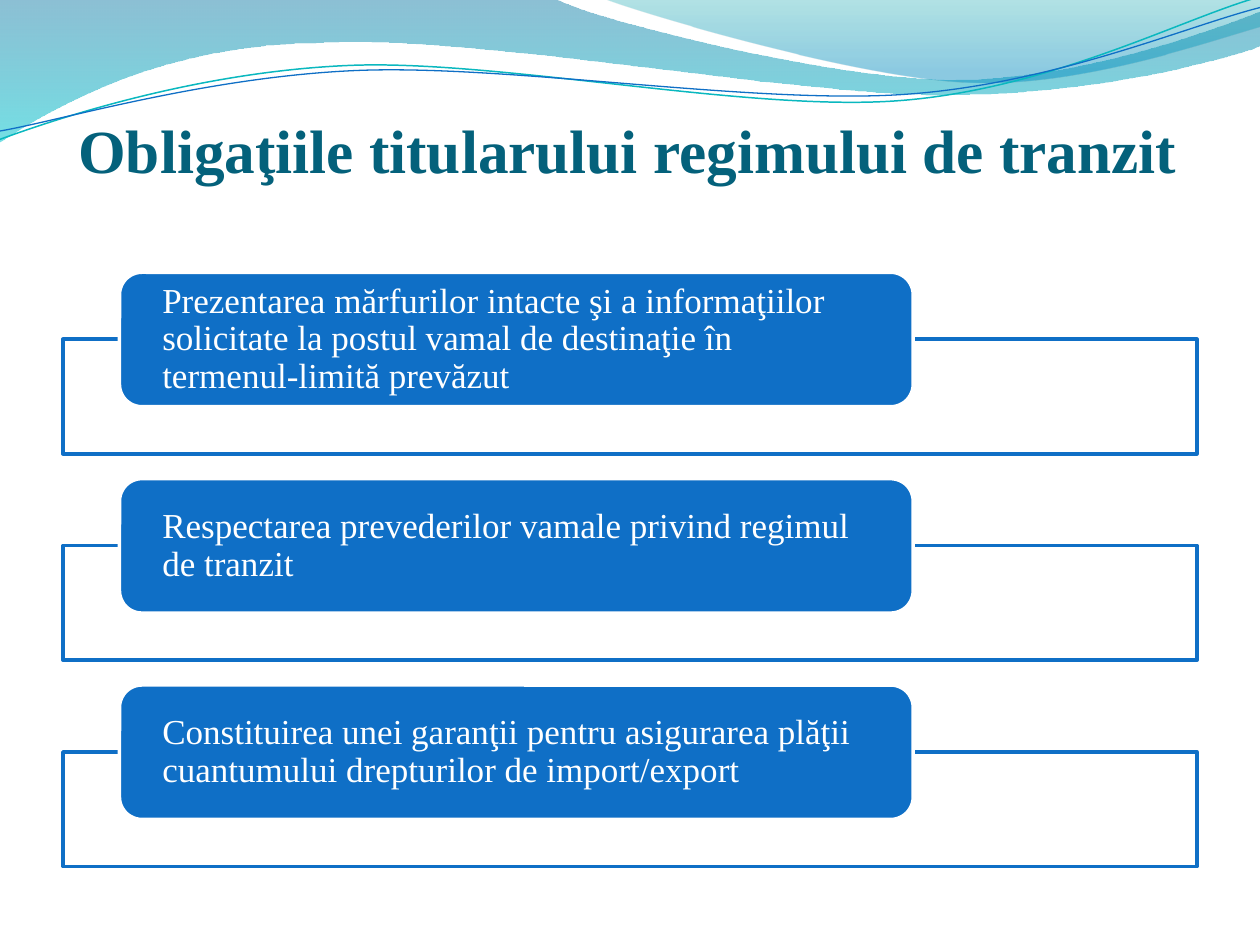
from dataclasses import dataclass

from lxml.etree import SubElement
from pptx import Presentation
from pptx.dml.color import RGBColor
from pptx.enum.shapes import MSO_SHAPE as Preset
from pptx.enum.text import MSO_ANCHOR as Anchor, MSO_AUTO_SIZE as AutoSize, PP_ALIGN as Align
from pptx.oxml.ns import qn
from pptx.util import Cm, Pt


@dataclass(frozen=True)
class Theme:
    font: str = "Times New Roman"
    title_size: int = 35
    body_size: int = 20
    title: str = "04617B"
    accent: str = "0F6FC6"
    teal: str = "0AB8BF"
    white: str = "FFFFFF"
    # Gradient stops: position, colour, opacity in percent
    band: tuple = ((0, "0074A1", 45), (1, "00C6CF", 55))
    corner: tuple = ((0, "00A1A9", 30), (0.8, "008BBF", 45))


THEME = Theme()
CM_PER_INCH = 2.54

# Outlines in inches: a start point, then steps of one point (line) or three (curve)
BAND = [
    (0, -0.01), [(4.4, -0.01)],
    [(4.76, 0.17), (6.64, 0.63), (7.58, 0.63)],
    [(8.53, 0.63), (9.58, 0.26), (10, 0.09)],
    [(10.01, 0.36)],
    [(9.83, 0.44), (8.7, 0.76), (7.46, 0.75)],
    [(6.22, 0.75), (3.82, 0.28), (2.57, 0.34)],
    [(1.29, 0.35), (0.46, 0.83), (-0.01, 1.13)],
]
CORNER = [
    (4.79, -0.01),
    [(5.09, 0.11), (6.82, 0.62), (7.69, 0.65)],
    [(8.56, 0.69), (9.61, 0.32), (10, 0.21)],
    [(10, 0)],
]
TEAL_WAVE = [
    (-0.01, 1.11),
    [(0.48, 0.93), (1.58, 0.57), (2.77, 0.52)],
    [(3.95, 0.47), (5.93, 0.89), (7.13, 0.8)],
    [(8.33, 0.71), (9.38, 0.15), (9.98, -0.02)],
]
BLUE_WAVE = [
    (0, 1.04),
    [(0.47, 0.96), (1.64, 0.61), (2.83, 0.56)],
    [(4.03, 0.51), (5.97, 0.83), (7.17, 0.75)],
    [(8.36, 0.67), (9.41, 0.21), (10, 0.06)],
]

TITLE = "Obligaţiile titularului regimului de tranzit"
OBLIGATIONS = [
    "Prezentarea mărfurilor intacte şi a informaţiilor solicitate la postul vamal "
    "de destinaţie în termenul-limită prevăzut",
    "Respectarea prevederilor vamale privind regimul de tranzit",
    "Constituirea unei garanţii pentru asigurarea plăţii cuantumului drepturilor "
    "de import/export",
]


def rgb(colour):
    return RGBColor.from_string(colour)


def set_opacity(shape, opacities):
    """Give the fill colours of a shape, in order, an opacity in percent."""
    colours = shape.element.spPr.iter(qn("a:srgbClr"))
    for colour, opacity in zip(list(colours), opacities):
        SubElement(colour, qn("a:alpha"), val=str(opacity * 1000))


def set_line(shape, colour, width):
    shape.line.color.rgb = rgb(colour)
    shape.line.width = Pt(width)


def write_text(shape, text, *, size, colour, bold=False, anchor=Anchor.MIDDLE,
               margins=(0, 0, 0, 0), line_spacing=1.0):
    frame = shape.text_frame
    frame.word_wrap = True
    frame.auto_size = AutoSize.NONE
    frame.vertical_anchor = anchor
    (frame.margin_left, frame.margin_top,
     frame.margin_right, frame.margin_bottom) = map(Cm, margins)
    frame.text = text
    paragraph = frame.paragraphs[0]
    paragraph.alignment = Align.LEFT
    paragraph.line_spacing = line_spacing
    font = paragraph.runs[0].font
    font.name, font.size, font.bold = THEME.font, Pt(size), bold
    font.color.rgb = rgb(colour)


def add_curve(slide, outline, closed):
    """Draw a freeform, turning each three-point step into a Bézier curve."""
    def to_slide(point):
        return tuple(Cm(value * CM_PER_INCH) for value in point)

    start, *steps = outline
    builder = slide.shapes.build_freeform(*to_slide(start))
    builder.add_line_segments(
        [to_slide(point) for step in steps for point in step], close=closed)
    shape = builder.convert_to_shape()
    shape.shadow.inherit = False
    segments = iter(list(shape.element.iter(qn("a:lnTo"))))
    for step in steps:
        first, *others = [next(segments) for _ in step]
        if others:
            first.tag = qn("a:cubicBezTo")
            for segment in others:
                first.append(segment[0])
                segment.getparent().remove(segment)
    return shape


def add_gradient_area(slide, outline, stops):
    shape = add_curve(slide, outline, closed=True)
    shape.line.fill.background()
    shape.fill.gradient()
    shape.fill.gradient_angle = 270
    for stop, (position, colour, _) in zip(shape.fill.gradient_stops, stops):
        stop.position = position
        stop.color.rgb = rgb(colour)
    set_opacity(shape, [opacity for _, _, opacity in stops])


def add_wave(slide, outline, colour, width):
    shape = add_curve(slide, outline, closed=False)
    shape.fill.background()
    set_line(shape, colour, width)


def add_box(slide, preset, left, top, width, height, *, fill, line):
    shape = slide.shapes.add_shape(preset, Cm(left), Cm(top), Cm(width), Cm(height))
    shape.shadow.inherit = False
    shape.fill.solid()
    shape.fill.fore_color.rgb = rgb(fill)
    set_line(shape, line, 2)
    return shape


def add_obligation(slide, text, top):
    frame = add_box(slide, Preset.RECTANGLE, 1.27, top + 1.35, 22.86, 2.31,
                    fill=THEME.white, line=THEME.accent)
    set_opacity(frame, [90])
    card = add_box(slide, Preset.ROUNDED_RECTANGLE, 2.41, top, 16, 2.71,
                   fill=THEME.accent, line=THEME.white)
    write_text(card, text, size=THEME.body_size, colour=THEME.white,
               margins=(0.73, 0, 0.73, 0), line_spacing=0.9)


def place_title(slide):
    title = slide.shapes.title
    title.left, title.top, title.width, title.height = map(Cm, (1.27, 1.96, 22.86, 1.78))
    write_text(title, TITLE, size=THEME.title_size, colour=THEME.title, bold=True,
               anchor=Anchor.BOTTOM, margins=(0.31, 0.13, 0, 0))
    # Bring the title in front of the waves
    title.element.getparent().append(title.element)


def main():
    presentation = Presentation()
    presentation.slide_width, presentation.slide_height = Cm(25.4), Cm(19.05)
    slide = presentation.slides.add_slide(presentation.slide_layouts[5])
    add_gradient_area(slide, BAND, THEME.band)
    add_gradient_area(slide, CORNER, THEME.corner)
    add_wave(slide, TEAL_WAVE, THEME.teal, 0.85)
    add_wave(slide, BLUE_WAVE, THEME.accent, 0.75)
    place_title(slide)
    for row, text in enumerate(OBLIGATIONS):
        add_obligation(slide, text, top=5.49 + 4.16 * row)
    presentation.save("out.pptx")


if __name__ == "__main__":
    main()
